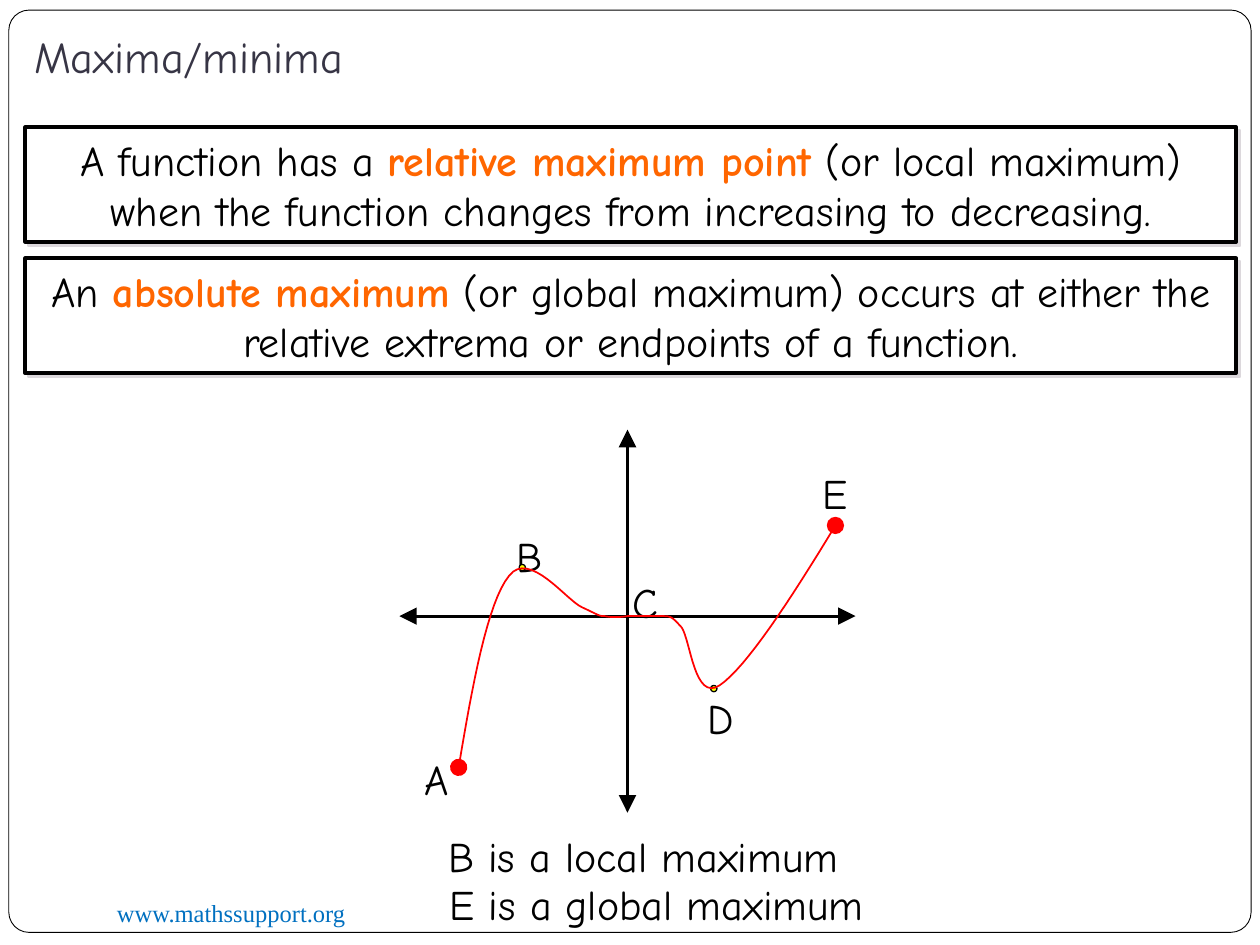
from lxml import etree
from pptx import Presentation
from pptx import util as u
from pptx.dml.color import RGBColor
from pptx.enum import shapes, text
from pptx.oxml import parse_xml
from pptx.oxml.ns import nsdecls, qn

HAND = "Comic Neue"
BLACK, RED, ORANGE = "000000", "FF0000", "FF6600"


def style(shape, fill=None, line=None, width=1, ends=None):
    """Set fill, outline and arrowheads, and drop the theme shadow."""
    if hasattr(shape, "fill"):
        if fill:
            shape.fill.solid()
            shape.fill.fore_color.rgb = RGBColor.from_string(fill)
        else:
            shape.fill.background()
    if line:
        shape.line.color.rgb = RGBColor.from_string(line)
        shape.line.width = u.Pt(width)
    if ends:
        outline = shape.line._get_or_add_ln()
        for tag in ("a:headEnd", "a:tailEnd"):
            etree.SubElement(outline, qn(tag), type=ends, w="lg", len="lg")
    if hasattr(shape, "shadow"):
        shape.shadow.inherit = False
    else:
        etree.SubElement(shape._element.spPr, qn("a:effectLst"))


def write(shape, spans, size=24, font=HAND, align=text.PP_ALIGN.LEFT, wrap=True):
    """Fill the shape with one paragraph of (words, colour, bold) spans."""
    frame = shape.text_frame
    frame.word_wrap = wrap
    para = frame.paragraphs[0]
    para.alignment = align
    for words, colour, bold in spans:
        span = para.add_run()
        span.text = words
        formats = {"size": u.Pt(size), "name": font, "bold": bold}
        for name, value in formats.items():
            setattr(span.font, name, value)
        span.font.color.rgb = RGBColor.from_string(colour)


deck = Presentation()
deck.slide_width, deck.slide_height = u.Inches(10), u.Inches(7.5)
page = deck.slides.add_slide(deck.slide_layouts[5])
title = page.shapes.title

# Page border, behind the title
border = page.shapes.add_shape(
    shapes.MSO_SHAPE.ROUNDED_RECTANGLE,
    u.Inches(0.07), u.Inches(0.08), u.Inches(9.86), u.Inches(7.32))
border.adjustments[0] = 0.022
style(border, "FFFFFF", BLACK, 0.5)
title._element.addprevious(border._element)

places = {"left": 0.17, "top": 0.2, "width": 9, "height": 0.55}
for name, value in places.items():
    setattr(title, name, u.Inches(value))
title.text_frame.vertical_anchor = text.MSO_ANCHOR.BOTTOM
title.text_frame.margin_bottom = u.Inches(0.1)
write(title, [("Maxima/minima", "373545", False)], 25.2)

website = page.shapes.add_textbox(
    u.Inches(0.83), u.Inches(7.08), u.Inches(3.25), u.Inches(0.34))
write(website, [("www.mathssupport.org", "0070C0", False)], 14, "Times New Roman")

# Definitions
definitions = [
    (1.01, "A function has a ", "relative maximum point",
     " (or local maximum) when the function changes from increasing to decreasing."),
    (2.05, "An ", "absolute maximum",
     " (or global maximum) occurs at either the relative extrema or endpoints of a function."),
]
for top, opening, term, rest in definitions:
    box = page.shapes.add_shape(
        shapes.MSO_SHAPE.RECTANGLE,
        u.Inches(0.2), u.Inches(top), u.Inches(9.61), u.Inches(0.91))
    style(box, "FFFFFF", BLACK, 2.25)
    box._element.spPr.find(qn("a:effectLst")).append(parse_xml(
        f'<a:outerShdw {nsdecls("a")} dist="{u.Pt(2.8)}" dir="2700000" algn="ctr" '
        'rotWithShape="0"><a:srgbClr val="DCD8DC"/></a:outerShdw>'))
    write(box, [(opening, BLACK, False), (term, ORANGE, True), (rest, BLACK, False)],
          align=text.PP_ALIGN.CENTER)

# Conclusions
for left, top, width, words in [(3.46, 6.54, 3.38, "B is a local maximum"),
                                (3.47, 6.92, 3.61, "E is a global maximum")]:
    caption = page.shapes.add_textbox(
        u.Inches(left), u.Inches(top), u.Inches(width), u.Inches(0.5))
    write(caption, [(words, BLACK, False)], wrap=False)

# Graph: axes, point labels, turning points and curve
graph = page.shapes.add_group_shape().shapes
for x1, y1, x2, y2, width in [(3.17, 4.89, 6.79, 4.89, 1.75),
                              (4.98, 3.41, 4.98, 6.45, 2)]:
    axis = graph.add_connector(
        shapes.MSO_CONNECTOR.STRAIGHT,
        u.Inches(x1), u.Inches(y1), u.Inches(x2), u.Inches(y2))
    style(axis, line=BLACK, width=width, ends="triangle")

for letter, left, top, width in [("B", 4, 4.16, 0.49), ("E", 6.43, 3.66, 0.4),
                                 ("A", 3.27, 5.93, 0.45), ("D", 5.52, 5.45, 0.56),
                                 ("C", 4.92, 4.53, 0.49)]:
    label = graph.add_textbox(
        u.Inches(left), u.Inches(top), u.Inches(width), u.Inches(0.5))
    write(label, [(letter, BLACK, False)])

for left, top in [(4.12, 4.48), (5.64, 5.44)]:
    dot = graph.add_shape(
        shapes.MSO_SHAPE.OVAL,
        u.Inches(left), u.Inches(top), u.Inches(0.05), u.Inches(0.05))
    style(dot, "FFFF00", BLACK, 0.75)

# Each Bezier segment: two control points and an end point
start = (3.64, 6.09)
segments = [
    ((3.75, 5.43), (3.87, 4.78), (4.04, 4.57)),
    ((4.2, 4.36), (4.5, 4.77), (4.62, 4.82)),
    ((4.75, 4.88), (4.75, 4.89), (4.8, 4.89)),
    ((4.85, 4.9), (4.91, 4.9), (4.98, 4.89)),
    ((5.05, 4.89), (5.19, 4.89), (5.26, 4.89)),
    ((5.32, 4.89), (5.33, 4.89), (5.41, 4.98)),
    ((5.48, 5.08), (5.51, 5.57), (5.71, 5.44)),
    ((5.92, 5.3), (6.28, 4.75), (6.63, 4.17)),
]
STEPS = 16
points = []
pen = start
for first, second, end in segments:
    for step in range(1, STEPS + 1):
        t = step / STEPS
        weights = ((1 - t) ** 3, 3 * t * (1 - t) ** 2, 3 * t ** 2 * (1 - t), t ** 3)
        corners = (pen, first, second, end)
        points.append([u.Inches(sum(w * c[i] for w, c in zip(weights, corners)))
                       for i in (0, 1)])
    pen = end
builder = graph.build_freeform(u.Inches(start[0]), u.Inches(start[1]))
builder.add_line_segments(points, close=False)
curve = builder.convert_to_shape()
style(curve, line=RED, width=1, ends="oval")

deck.save("out.pptx")
